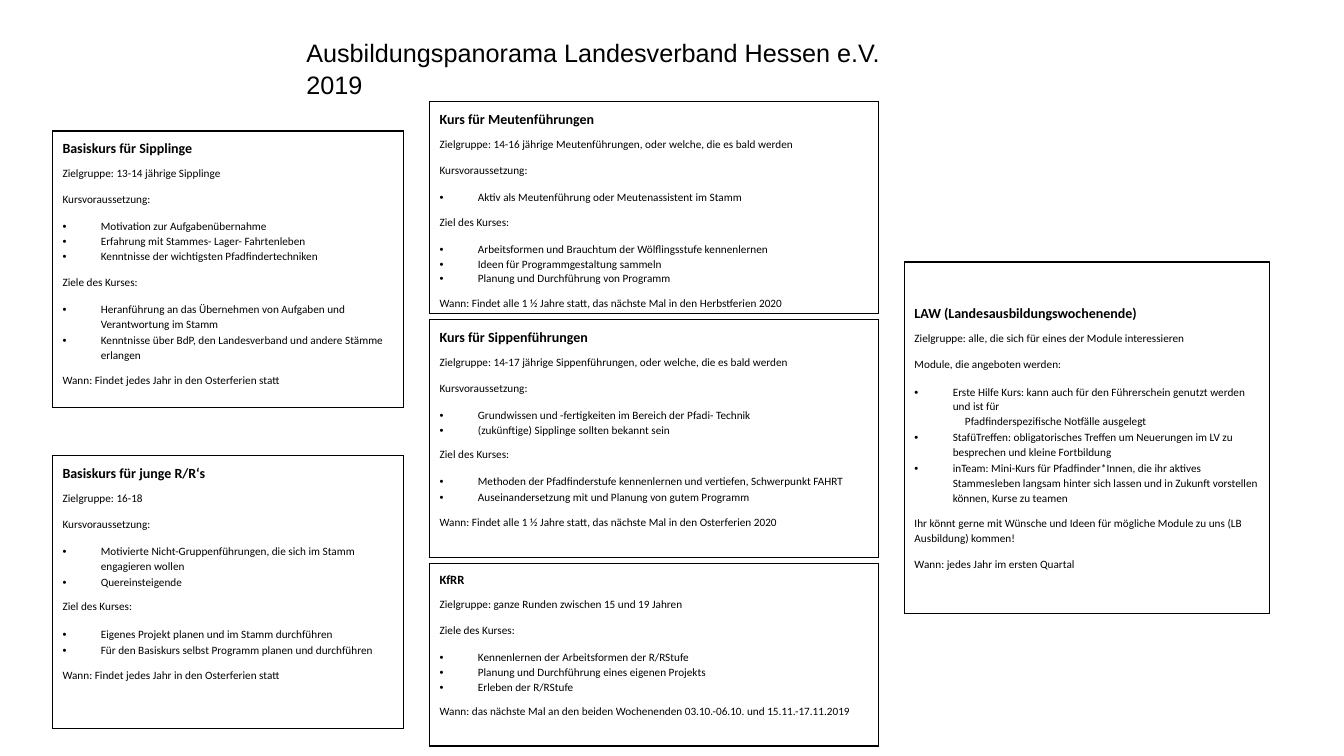
from lxml import etree
from pptx import Presentation
from pptx.dml.color import RGBColor
from pptx.enum.text import MSO_ANCHOR, MSO_AUTO_SIZE
from pptx.oxml.ns import qn
from pptx.util import Inches, Pt

TOP, MIDDLE = MSO_ANCHOR.TOP, MSO_ANCHOR.MIDDLE
GROW = MSO_AUTO_SIZE.SHAPE_TO_FIT_TEXT
COLORS = {"ink": "000000"}
HANG = 0.38  # bullet indent

# Lines: "• " marks a bullet, "> " an indented line; a pair adds its own gap after.
SIPPLING = [
    "Basiskurs für Sipplinge",
    "Zielgruppe: 13-14 jährige Sipplinge",
    "Kursvoraussetzung:",
    "• Motivation zur Aufgabenübernahme",
    "• Erfahrung mit Stammes- Lager- Fahrtenleben",
    ("• Kenntnisse der wichtigsten Pfadfindertechniken", 8),
    "Ziele des Kurses:",
    ("• Heranführung an das Übernehmen von Aufgaben und Verantwortung im Stamm", 0.9),
    ("• Kenntnisse über BdP, den Landesverband und andere Stämme erlangen", 8),
    "Wann: Findet jedes Jahr in den Osterferien statt",
]
RUNDE = [
    "Basiskurs für junge R/R‘s",
    "Zielgruppe: 16-18",
    "Kursvoraussetzung:",
    ("• Motivierte Nicht-Gruppenführungen, die sich im Stamm engagieren wollen", 0.9),
    "• Quereinsteigende",
    "Ziel des Kurses:",
    ("• Eigenes Projekt planen und im Stamm durchführen", 0.9),
    ("• Für den Basiskurs selbst Programm planen und durchführen", 8),
    "Wann: Findet jedes Jahr in den Osterferien statt",
]
MEUTE = [
    "Kurs für Meutenführungen",
    "Zielgruppe: 14-16 jährige Meutenführungen, oder welche, die es bald werden",
    "Kursvoraussetzung:",
    "• Aktiv als Meutenführung oder Meutenassistent im Stamm",
    "Ziel des Kurses:",
    "• Arbeitsformen und Brauchtum der Wölflingsstufe kennenlernen",
    "• Ideen für Programmgestaltung sammeln",
    "• Planung und Durchführung von Programm",
    "Wann: Findet alle 1 ½ Jahre statt, das nächste Mal in den Herbstferien 2020",
]
SIPPE = [
    "Kurs für Sippenführungen",
    "Zielgruppe: 14-17 jährige Sippenführungen, oder welche, die es bald werden",
    "Kursvoraussetzung:",
    "• Grundwissen und -fertigkeiten im Bereich der Pfadi- Technik",
    "• (zukünftige) Sipplinge sollten bekannt sein",
    "Ziel des Kurses:",
    ("• Methoden der Pfadfinderstufe kennenlernen und vertiefen, Schwerpunkt FAHRT", 0.9),
    "• Auseinandersetzung mit und Planung von gutem Programm",
    "Wann: Findet alle 1 ½ Jahre statt, das nächste Mal in den Osterferien 2020",
]
KFRR = [
    "KfRR",
    "Zielgruppe: ganze Runden zwischen 15 und 19 Jahren",
    "Ziele des Kurses:",
    "• Kennenlernen der Arbeitsformen der R/RStufe",
    "• Planung und Durchführung eines eigenen Projekts",
    "• Erleben der R/RStufe",
    "Wann: das nächste Mal an den beiden Wochenenden 03.10.-06.10. und 15.11.-17.11.2019",
]
LAW = [
    "LAW (Landesausbildungswochenende)",
    "Zielgruppe: alle, die sich für eines der Module interessieren",
    "Module, die angeboten werden:",
    ("• Erste Hilfe Kurs: kann auch für den Führerschein genutzt werden und ist für", 0),
    ("> Pfadfinderspezifische Notfälle ausgelegt", 0.9),
    ("• StafüTreffen: obligatorisches Treffen um Neuerungen im LV zu "
     "besprechen und kleine Fortbildung", 1.1),
    ("• inTeam: Mini-Kurs für Pfadfinder*Innen, die ihr aktives Stammesleben "
     "langsam hinter sich lassen und in Zukunft vorstellen können, Kurse zu teamen", 8),
    "Ihr könnt gerne mit Wünsche und Ideen für mögliche Module zu uns "
    "(LB Ausbildung) kommen!",
    "Wann: jedes Jahr im ersten Quartal",
]
# left, top, width, gap, anchor, cards as (height, heading size, lines)
COLUMNS = [
    (0.52, 1.3, 3.48, 0.48, TOP, [(2.74, 10, SIPPLING), (2.71, 10, RUNDE)]),
    (4.26, 1.01, 4.45, 0.06, TOP,
     [(2.1, 10, MEUTE), (2.36, 10, SIPPE), (1.81, 9, KFRR)]),
    (8.97, 2.6, 3.62, 0, MIDDLE, [(3.49, 10, LAW)]),
]


def write(para, text, size=8, font="Calibri", bold=False, after=0,
          left=0, bullet=False):
    props = para._p.get_or_add_pPr()
    props.set("marL", str(Inches(left)))
    props.set("indent", str(-Inches(left) if bullet else 0))
    if bullet:
        color = etree.SubElement(props, qn("a:buClr"))
        etree.SubElement(color, qn("a:srgbClr"), val=COLORS["ink"])
        etree.SubElement(props, qn("a:buFont"), typeface="Arial")
        etree.SubElement(props, qn("a:buChar"), char="•")
    else:
        etree.SubElement(props, qn("a:buNone"))
    para.line_spacing = 1.07
    para.space_before = Pt(0)
    para.space_after = Pt(after)
    run = para.add_run()
    run.text = text
    run.font.size = Pt(size)
    run.font.name = font
    run.font.bold = bold
    run.font.color.rgb = RGBColor.from_string(COLORS["ink"])


def outline(cell):
    props = cell._tc.get_or_add_tcPr()
    for side in "LRTB":
        line = etree.SubElement(props, qn("a:ln" + side), w=str(Pt(1)))
        fill = etree.SubElement(line, qn("a:solidFill"))
        etree.SubElement(fill, qn("a:srgbClr"), val=COLORS["ink"])
    cell.fill.background()


deck = Presentation()
deck.slide_width, deck.slide_height = Inches(13.33), Inches(7.5)
slide = deck.slides.add_slide(deck.slide_layouts[6])

title = slide.shapes.add_textbox(Inches(0.46), Inches(0.3), Inches(8.52), Inches(0.43))
title.text_frame.word_wrap = True
title.text_frame.auto_size = GROW
write(title.text_frame.paragraphs[0],
      "Ausbildungspanorama Landesverband Hessen e.V. 2019",
      size=18, font="Arial", left=2.48)

for left, top, width, gap, anchor, cards in COLUMNS:
    for height, head, lines in cards:
        table = slide.shapes.add_table(
            1, 1, Inches(left), Inches(top), Inches(width), Inches(height)).table
        table.first_row = table.horz_banding = False
        cell = table.cell(0, 0)
        outline(cell)
        cell.vertical_anchor = anchor
        cell.margin_left = cell.margin_right = Inches(0.1)
        cell.margin_top = Inches(0.08 if anchor == TOP else 0)
        cell.margin_bottom = 0
        frame = cell.text_frame
        for i, line in enumerate(lines):
            text, after = line if isinstance(line, tuple) else (line, None)
            para = frame.add_paragraph() if i else frame.paragraphs[0]
            bullet = text.startswith("• ")
            inset = text.startswith("> ")
            last = i == len(lines) - 1
            if after is None:
                if i == 0:
                    after = 6.2
                elif last:
                    after = 0
                elif bullet:
                    after = 0 if lines[i + 1][0] == "•" or lines[i + 1][0][0] == "•" else 7
                else:
                    after = 9 if text.endswith(":") else 8
            write(para, text[2:] if bullet or inset else text,
                  size=head if i == 0 else 8, bold=i == 0, after=after,
                  left=HANG if bullet else 0.5 if inset else 0, bullet=bullet)
        top += height + gap

deck.save("out.pptx")
